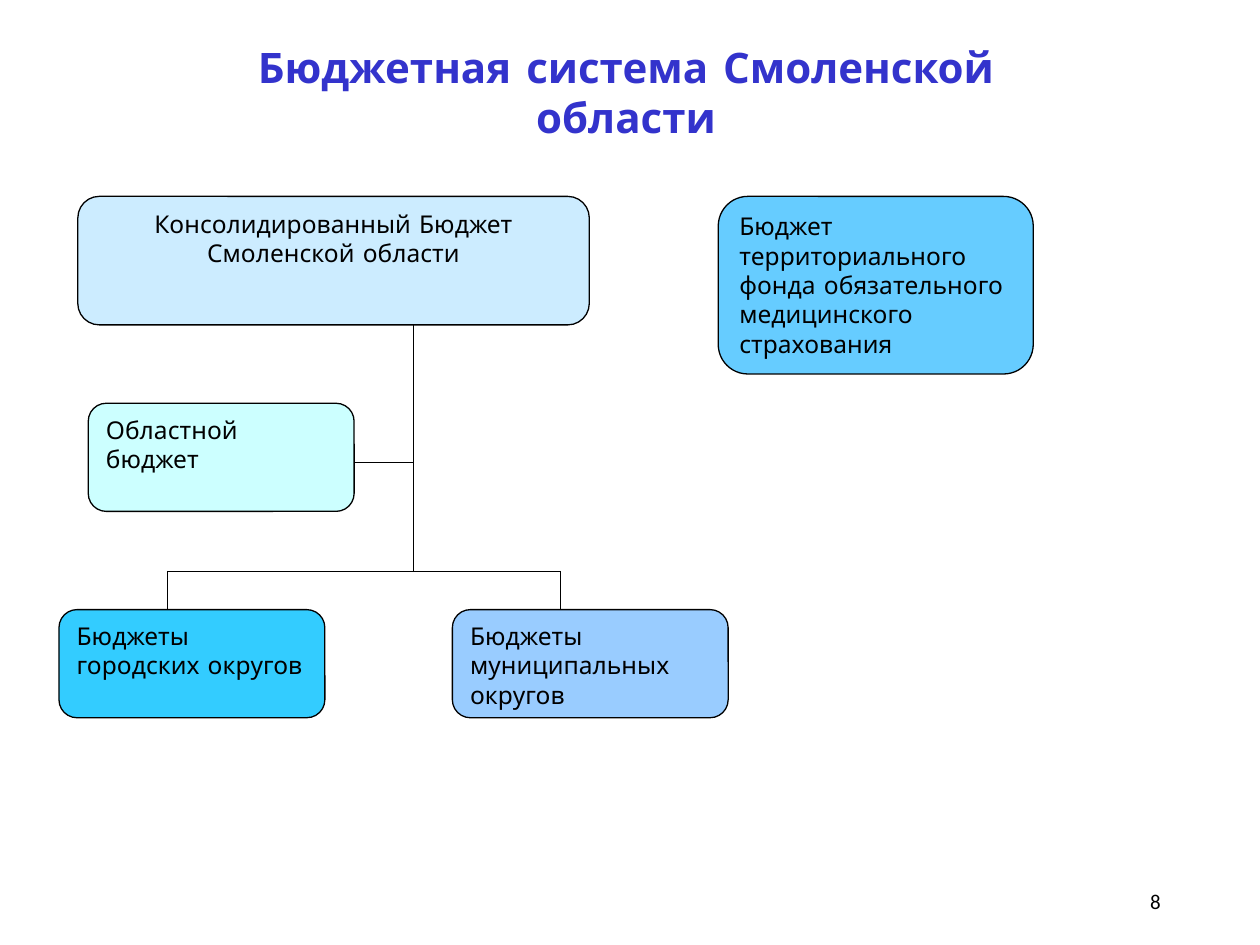
from collections import namedtuple

from lxml.etree import SubElement
from pptx import Presentation
from pptx.dml.color import RGBColor
from pptx.enum.shapes import MSO_CONNECTOR, MSO_SHAPE
from pptx.enum.text import MSO_ANCHOR, PP_ALIGN
from pptx.oxml.ns import qn
from pptx.util import Cm, Pt

Box = namedtuple("Box", "left top width height")

FONT = "Comic Neue"
BLACK = "000000"

CONSOLIDATED = Box(1.57, 3.96, 10.31, 2.59)
FUND = Box(14.48, 3.96, 6.35, 3.58)
REGIONAL = Box(1.78, 8.13, 5.36, 2.18)
URBAN = Box(1.19, 12.29, 5.36, 2.18)
MUNICIPAL = Box(9.12, 12.29, 5.56, 2.18)


def color(value):
    return RGBColor.from_string(value)


def lengths(box):
    return [Cm(value) for value in box]


def write(shape, text, size, align=PP_ALIGN.LEFT, font=FONT, ink=BLACK,
          bold=False, anchor=MSO_ANCHOR.TOP):
    frame = shape.text_frame
    frame.word_wrap = True
    frame.vertical_anchor = anchor
    frame.text = text
    para = frame.paragraphs[0]
    para.alignment = align
    span = para.runs[0].font
    span.name = font
    span.size = Pt(size)
    span.bold = bold
    span.color.rgb = color(ink)


def add_text(page, box, text, size, **style):
    write(page.shapes.add_textbox(*lengths(box)), text, size, **style)


def add_budget(page, box, text, fill, align=PP_ALIGN.LEFT):
    shape = page.shapes.add_shape(
        MSO_SHAPE.FLOWCHART_ALTERNATE_PROCESS, *lengths(box))
    shape.shadow.inherit = False
    shape.fill.solid()
    shape.fill.fore_color.rgb = color(fill)
    shape.line.color.rgb = color(BLACK)
    shape.line.width = Pt(0.75)
    write(shape, text, 14, align=align)


def add_line(page, start, end, width=0.5):
    line = page.shapes.add_connector(
        MSO_CONNECTOR.STRAIGHT, *lengths(start + end))
    line.line.color.rgb = color(BLACK)
    line.line.width = Pt(width)
    SubElement(line._element.spPr, qn("a:effectLst"))


def add_budget_tree(page, root, side, leaves):
    """Join the root box to the side box and to the leaf boxes below."""
    trunk = root.left + 6.76
    fork = leaves[0].top - 0.78
    side_y = side.top + side.height / 2 + 0.1
    drops = [leaf.left + 2.18 for leaf in leaves]
    add_line(page, (trunk, root.top + root.height), (trunk, fork), 0.75)
    add_line(page, (drops[0], fork), (drops[-1], fork))
    add_line(page, (side.left + side.width, side_y), (trunk, side_y))
    for leaf, drop in zip(leaves, drops):
        add_line(page, (drop, fork), (drop, leaf.top))


def main():
    deck = Presentation()
    deck.slide_width, deck.slide_height = Cm(25.4), Cm(19.05)
    page = deck.slides.add_slide(deck.slide_layouts[6])

    add_text(page, Box(4.29, 0.71, 16.66, 1.19),
             "Бюджетная система Смоленской области", 24,
             align=PP_ALIGN.CENTER, ink="3333CC", bold=True)
    add_budget(page, CONSOLIDATED, "Консолидированный Бюджет Смоленской области",
               "CCECFF", PP_ALIGN.CENTER)
    add_budget(page, MUNICIPAL, "Бюджеты муниципальных округов", "99CCFF")
    add_budget(page, URBAN, "Бюджеты городских округов", "33CCFF")
    add_budget(page, REGIONAL, "Областной бюджет", "CCFFFF")
    add_budget(page, FUND, "Бюджет территориального фонда обязательного "
               "медицинского страхования", "66CCFF")
    add_text(page, Box(17.93, 17.65, 5.72, 1.02), "8", 12,
             align=PP_ALIGN.RIGHT, font="Calibri", anchor=MSO_ANCHOR.MIDDLE)
    add_budget_tree(page, CONSOLIDATED, REGIONAL, [URBAN, MUNICIPAL])

    deck.save("out.pptx")


if __name__ == "__main__":
    main()
